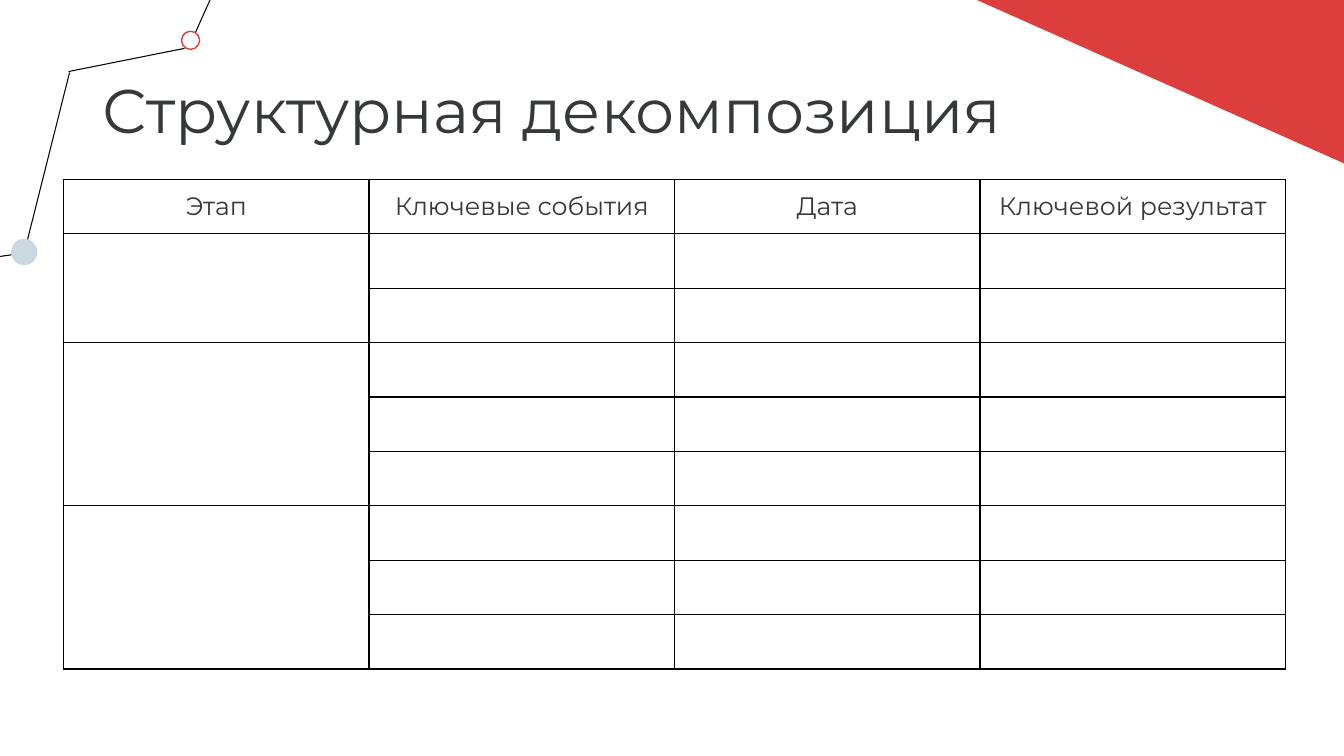
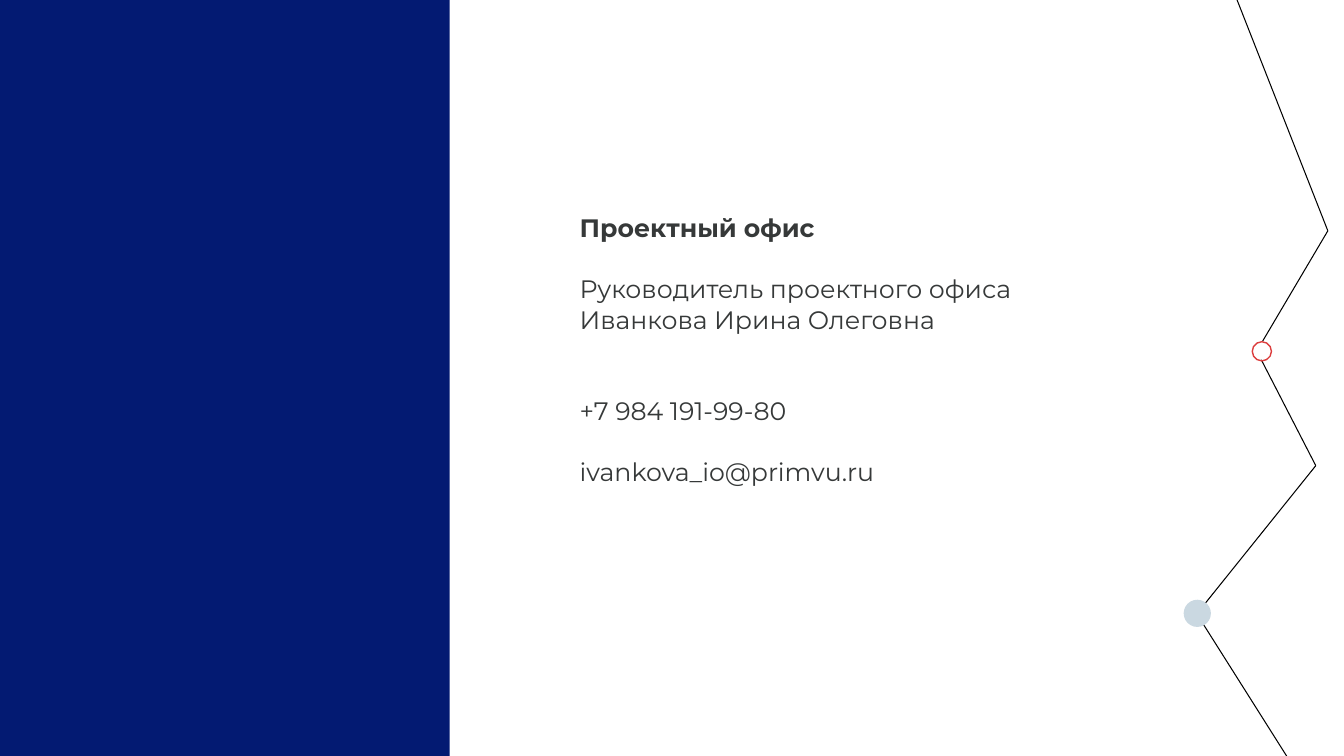
from lxml import etree
from pptx import Presentation
from pptx.dml.color import RGBColor
from pptx.enum.shapes import MSO_CONNECTOR, MSO_SHAPE
from pptx.enum.text import MSO_ANCHOR, MSO_AUTO_SIZE, PP_ALIGN
from pptx.oxml import parse_xml
from pptx.oxml.ns import nsdecls, qn
from pptx.util import Inches, Pt

STRAIGHT = MSO_CONNECTOR.STRAIGHT
RECTANGLE, TRIANGLE, OVAL = MSO_SHAPE.RECTANGLE, MSO_SHAPE.RIGHT_TRIANGLE, MSO_SHAPE.OVAL
MIDDLE = MSO_ANCHOR.MIDDLE
LEFT, CENTER = PP_ALIGN.LEFT, PP_ALIGN.CENTER

FONT = "Montserrat"
INK, BLACK, RED, NAVY, PALE = "363939", "000000", "DC3E3E", "031A72", "CAD8E1"


def color(hex_string):
    return RGBColor.from_string(hex_string)


def add_figure(slide, preset, box, fill=None, outline=None):
    figure = slide.shapes.add_shape(preset, *(Inches(v) for v in box))
    figure.shadow.inherit = False
    if fill:
        figure.fill.solid()
        figure.fill.fore_color.rgb = color(fill)
    else:
        figure.fill.background()
    if outline:
        figure.line.color.rgb = color(outline)
        figure.line.width = Pt(1)
    else:
        figure.line.fill.background()
    return figure


prs = Presentation()
prs.slide_width, prs.slide_height = Inches(13.33), Inches(7.5)
TITLE_ONLY, BLANK = prs.slide_layouts[5], prs.slide_layouts[6]

# Slide 1: title
breakdown = prs.slides.add_slide(TITLE_ONLY)
title = breakdown.shapes.title
title.left, title.top, title.width, title.height = (Inches(v) for v in (0.92, 0.4, 11.5, 1.45))
title.text_frame.text = "Структурная декомпозиция"
title.text_frame.auto_size = MSO_AUTO_SIZE.NONE
title.text_frame.vertical_anchor = MIDDLE
heading = title.text_frame.paragraphs[0]
heading.alignment = LEFT
heading.line_spacing = 0.9
heading.font.name, heading.font.size = FONT, Pt(44)
heading.font.color.rgb = color(INK)

# Slide 1: stages table
headers = ["Этап", "Ключевые события", "Дата", "Ключевой результат"]
events_per_stage = [2, 3, 3]
row_count = 1 + sum(events_per_stage)
col_width, row_height = 3.03, 0.54
stages = breakdown.shapes.add_table(
    row_count, len(headers), Inches(0.63), Inches(1.78),
    Inches(col_width * len(headers)), Inches(row_height * row_count)).table
stages.first_row = stages.horz_banding = False

for cell in stages.iter_cells():
    cell_properties = cell._tc.get_or_add_tcPr()
    for side in ("lnL", "lnR", "lnT", "lnB"):
        cell_properties.append(parse_xml(
            f'<a:{side} {nsdecls("a")} w="12700"><a:solidFill>'
            f'<a:srgbClr val="{BLACK}"/></a:solidFill></a:{side}>'))
    cell.fill.background()
    cell.vertical_anchor = MIDDLE

for column, header in enumerate(headers):
    cell = stages.cell(0, column)
    cell.text = header
    label = cell.text_frame.paragraphs[0]
    label.alignment = CENTER
    label.font.name, label.font.size = FONT, Pt(18)
    label.font.color.rgb = color(INK)

first_row = 1
for events in events_per_stage:
    last_row = first_row + events - 1
    stages.cell(first_row, 0).merge(stages.cell(last_row, 0))
    first_row = last_row + 1

# Slide 1: corner triangle
corner = add_figure(breakdown, TRIANGLE, (9.24, -0.2, 4.56, 2.03), fill=RED)
corner.rotation = 180

# Slide 2: side band
contacts = prs.slides.add_slide(BLANK)
add_figure(contacts, RECTANGLE, (-0.36, -0.14, 4.82, 7.74), fill=NAVY)

# Slide 2: contact details, with the space before each line in points
contact_lines = [
    ("Проектный офис", 0),
    ("Руководитель проектного офиса", 22),
    ("Иванкова Ирина Олеговна", 0),
    ("+7 984 191-99-80", 44),
    ("ivankova_io@primvu.ru", 22),
]
details = contacts.shapes.add_textbox(
    Inches(5.65), Inches(2.06), Inches(6.72), Inches(4.04)).text_frame
details.word_wrap = True
for index, (text, gap) in enumerate(contact_lines):
    line = details.add_paragraph() if index else details.paragraphs[0]
    line.text = text
    line.space_before = Pt(gap)
    line.font.name, line.font.size = FONT, Pt(18)
    line.font.bold = index == 0
    line.font.color.rgb = color(INK)

# Both slides: broken line with a red ring and a pale dot
trails = [
    (breakdown,
     [(1.94, 0.32, 2.44, -0.8), (0.68, 0.71, 1.83, 0.48),
      (0.24, 2.51, 0.69, 0.72), (-2.28, 2.87, 0.24, 2.51)],
     (1.8, 0.31, 0.18, 0.18), (0.11, 2.37, 0.26, 0.26)),
    (contacts,
     [(12.03, -0.61, 13.17, 2.29), (12.52, 3.39, 13.17, 2.29),
      (13.05, 4.62, 12.51, 3.57), (11.87, 6.09, 13.05, 4.62),
      (13.26, 8.29, 11.87, 6.09)],
     (12.42, 3.39, 0.19, 0.19), (11.74, 5.95, 0.27, 0.27)),
]
for slide, segments, ring, dot in trails:
    for ends in segments:
        segment = slide.shapes.add_connector(STRAIGHT, *(Inches(v) for v in ends))
        segment.line.color.rgb = color(BLACK)
        segment.line.width = Pt(0.75)
        etree.SubElement(segment._element.spPr, qn("a:effectLst"))
    add_figure(slide, OVAL, ring, outline=RED)
    add_figure(slide, OVAL, dot, fill=PALE)

prs.save("out.pptx")
